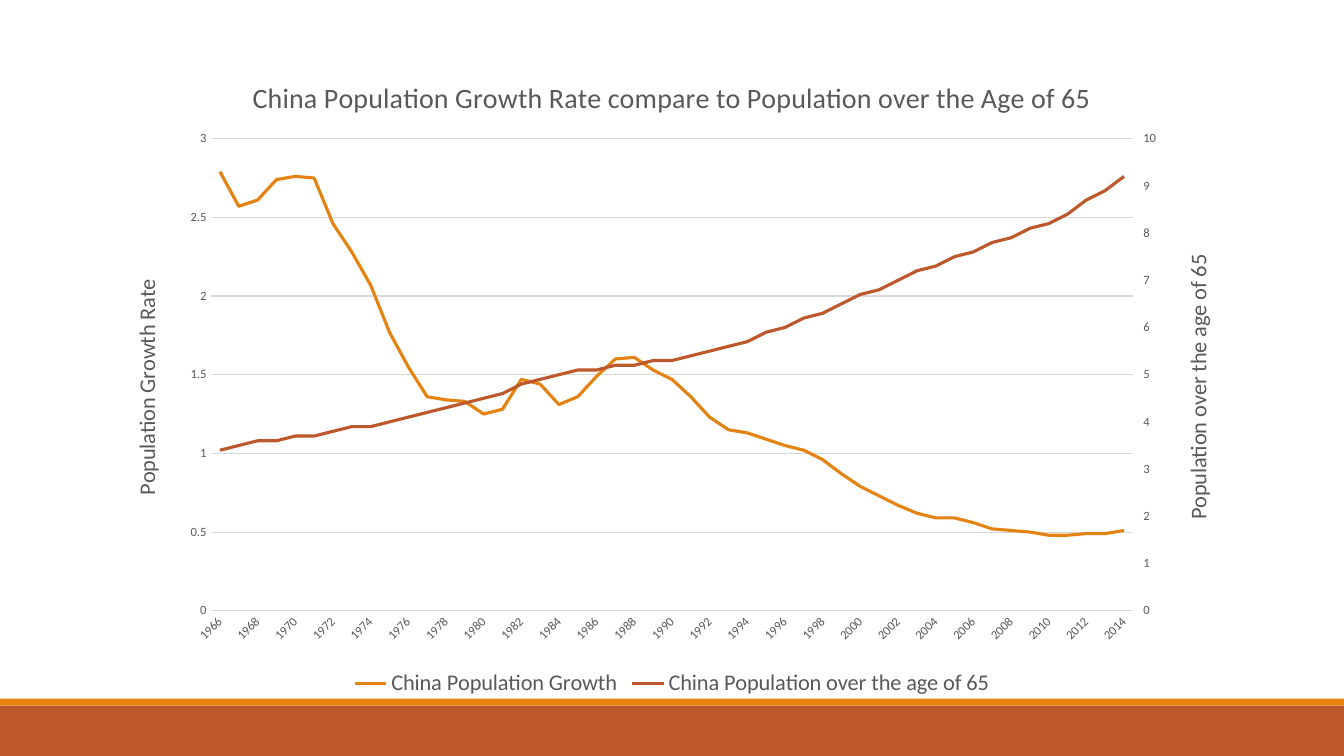
import copy
import lxml.etree
import pptx
import pptx.chart.axis
import pptx.chart.data
import pptx.dml.color
import pptx.enum.chart
import pptx.enum.shapes
import pptx.oxml
import pptx.oxml.ns
import pptx.util

Pt = pptx.util.Pt
enum = pptx.enum.chart
qn = pptx.oxml.ns.qn
hues = {"gold": "E48312", "rust": "BD582C", "text": "595959", "grid": "D9D9D9"}

growth = [
    2.79, 2.57, 2.61, 2.74, 2.76, 2.75, 2.46, 2.28, 2.07, 1.77,
    1.55, 1.36, 1.34, 1.33, 1.25, 1.28, 1.47, 1.44, 1.31, 1.36,
    1.49, 1.6, 1.61, 1.53, 1.47, 1.36, 1.23, 1.15, 1.13, 1.09,
    1.05, 1.02, 0.96, 0.87, 0.79, 0.73, 0.67, 0.62, 0.59, 0.59,
    0.56, 0.52, 0.51, 0.5, 0.48, 0.48, 0.49, 0.49, 0.51,
]
aged = [
    3.4, 3.5, 3.6, 3.6, 3.7, 3.7, 3.8, 3.9, 3.9, 4,
    4.1, 4.2, 4.3, 4.4, 4.5, 4.6, 4.8, 4.9, 5, 5.1,
    5.1, 5.2, 5.2, 5.3, 5.3, 5.4, 5.5, 5.6, 5.7, 5.9,
    6, 6.2, 6.3, 6.5, 6.7, 6.8, 7, 7.2, 7.3, 7.5,
    7.6, 7.8, 7.9, 8.1, 8.2, 8.4, 8.7, 8.9, 9.2,
]


def style(font, size):
    font.name = "Calibri"
    font.size = Pt(size)
    font.bold = False
    font.color.rgb = pptx.dml.color.RGBColor.from_string(hues["text"])


def label(title, text, size):
    run = title.text_frame.paragraphs[0].add_run()
    run.text = text
    style(run.font, size)


deck = pptx.Presentation()
deck.slide_width, deck.slide_height = Pt(960), Pt(540)
slide = deck.slides.add_slide(deck.slide_layouts[6])

for top, high, hue in [(504, 36, "rust"), (499, 5, "gold")]:
    bar = slide.shapes.add_shape(
        pptx.enum.shapes.MSO_SHAPE.RECTANGLE, 0, Pt(top), Pt(960), Pt(high))
    bar.shadow.inherit = False
    bar.fill.solid()
    bar.fill.fore_color.rgb = pptx.dml.color.RGBColor.from_string(hues[hue])
    bar.line.fill.background()

data = pptx.chart.data.CategoryChartData()
data.categories = [str(year) for year in range(1966, 2015)]
data.add_series("China Population Growth", growth)
data.add_series("China Population over the age of 65", aged)
chart = slide.shapes.add_chart(
    enum.XL_CHART_TYPE.LINE, Pt(78), Pt(39), Pt(804), Pt(462), data).chart
style(chart.font, 10)
chart.has_title = True
label(chart.chart_title, "China Population Growth Rate compare to Population over the Age of 65", 20)
chart.chart_title.include_in_layout = False
chart.has_legend = True
chart.legend.position = enum.XL_LEGEND_POSITION.BOTTOM
chart.legend.include_in_layout = False
style(chart.legend.font, 16)

plot = chart.plots[0]
plot.vary_by_categories = False
for line, hue in zip(plot.series, ["gold", "rust"]):
    line.smooth = False
    line.marker.style = enum.XL_MARKER_STYLE.NONE
    line.format.line.width = Pt(2.25)
    line.format.line.color.rgb = pptx.dml.color.RGBColor.from_string(hues[hue])

years, left = chart.category_axis, chart.value_axis
for axis in [years, left]:
    axis.major_tick_mark = enum.XL_TICK_MARK.NONE
    axis.minor_tick_mark = enum.XL_TICK_MARK.NONE
    style(axis.tick_labels.font, 9)
years.has_major_gridlines = False
left.has_major_gridlines = True
for edge in [years.format.line, left.major_gridlines.format.line]:
    edge.width = Pt(0.75)
    edge.color.rgb = pptx.dml.color.RGBColor.from_string(hues["grid"])
left.format.line.fill.background()
left.tick_labels.number_format = "General"
left.tick_labels.number_format_is_linked = False
left.minimum_scale = 0
left.maximum_scale, left.major_unit = 3, 0.5
label(left.axis_title, "Population Growth Rate", 16)

area = chart.element.find(".//" + qn("c:plotArea"))
cat, val = area.find(qn("c:catAx")), area.find(qn("c:valAx"))
cat.find(qn("c:txPr")).find(qn("a:bodyPr")).set("rot", "-2700000")
turn = val.find(qn("c:title")).find(".//" + qn("a:bodyPr"))
turn.set("rot", "-5400000")
turn.set("vert", "horz")
if val.find(qn("c:crossBetween")) is None:
    between = lxml.etree.Element(qn("c:crossBetween"))
    between.set("val", "between")
    val.find(qn("c:crosses")).addnext(between)

lines = area.find(qn("c:lineChart"))
twin, rcat, rval = copy.deepcopy(lines), copy.deepcopy(cat), copy.deepcopy(val)
lines.remove(lines.findall(qn("c:ser"))[1])
twin.remove(twin.findall(qn("c:ser"))[0])
lines.addnext(twin)
val.addnext(rval)
rval.addnext(rcat)
for node, key in zip(twin.findall(qn("c:axId")), ["5001", "5002"]):
    node.set("val", key)
for node, key, cross in [(rcat, "5001", "5002"), (rval, "5002", "5001")]:
    node.find(qn("c:axId")).set("val", key)
    node.find(qn("c:crossAx")).set("val", cross)
rcat.find(qn("c:delete")).set("val", "1")
rval.find(qn("c:axPos")).set("val", "r")
rval.find(qn("c:crosses")).set("val", "max")

right = pptx.chart.axis.ValueAxis(rval)
right.has_major_gridlines = False
right.major_tick_mark = enum.XL_TICK_MARK.OUTSIDE
right.maximum_scale, right.major_unit = 10, 1
right.axis_title.text_frame.paragraphs[0].runs[0].text = "Population over the age of 65"

for old in area.findall(qn("c:layout")):
    area.remove(old)
frame = lxml.etree.SubElement(area, qn("c:layout"))
area.insert(0, frame)
manual = lxml.etree.SubElement(frame, qn("c:manualLayout"))
for tag, value in [("layoutTarget", "inner"), ("xMode", "edge"), ("yMode", "edge"),
                   ("x", "0.09"), ("y", "0.13"), ("w", "0.82"), ("h", "0.73")]:
    lxml.etree.SubElement(manual, qn("c:" + tag)).set("val", value)

deck.save("out.pptx")
